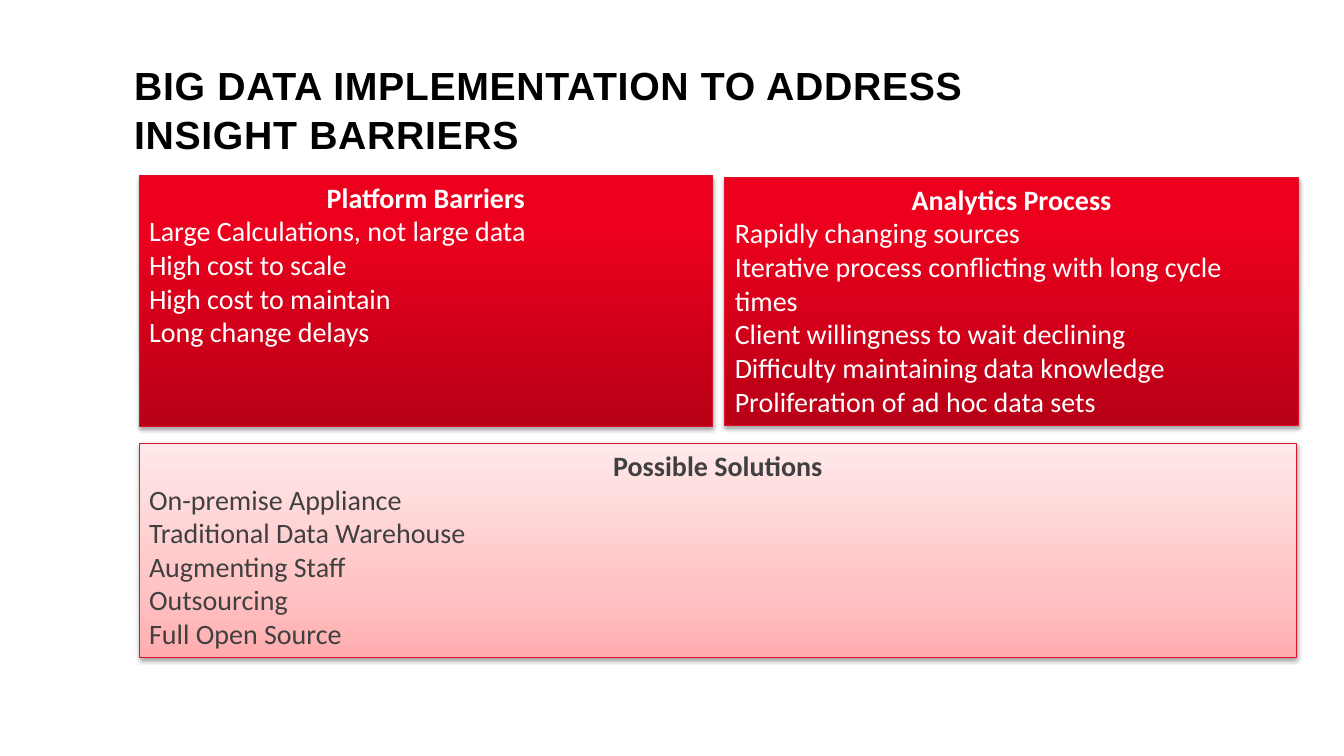
from dataclasses import dataclass

from lxml.etree import SubElement
from pptx import Presentation
from pptx.dml.color import RGBColor
from pptx.enum.shapes import MSO_SHAPE
from pptx.enum.text import MSO_ANCHOR, MSO_AUTO_SIZE, PP_ALIGN
from pptx.oxml.ns import qn
from pptx.slide import Slide
from pptx.util import Inches, Pt

Stops = tuple[tuple[int, str], ...]


@dataclass(frozen=True)
class Theme:
    title_font: str = "Arial"
    body_font: str = "Calibri"
    title_size: int = 28
    body_size: int = 20
    black: str = "000000"
    white: str = "FFFFFF"
    gray: str = "404040"
    border: str = "DD132B"
    red: Stops = ((0, "B70016"), (80, "ED001D"), (100, "EE001D"))
    pink: Stops = ((0, "FFADAF"), (35, "FFC5C6"), (100, "FFE9EA"))


@dataclass(frozen=True)
class Area:
    left: float
    top: float
    width: float
    height: float

    def emu(self) -> tuple[int, ...]:
        shares = (self.left, self.top, self.width, self.height)
        return tuple(round(v * full / 100) for v, full in zip(shares, (WIDTH, HEIGHT) * 2))


@dataclass(frozen=True)
class Panel:
    area: Area
    heading: str
    items: tuple[str, ...]
    stops: Stops
    color: str
    shadow_alpha: int
    shadow_dist: float
    auto_size: MSO_AUTO_SIZE = MSO_AUTO_SIZE.SHAPE_TO_FIT_TEXT


WIDTH, HEIGHT = Inches(13.33), Inches(7.5)
THEME = Theme()
LEFT, COLUMN, GAP = 10.35, 42.68, 0.9
TITLE = "BIG DATA IMPLEMENTATION TO ADDRESS \vINSIGHT BARRIERS"
TITLE_AREA = Area(9.98, 8.8, 90.02, 11.07)
PANELS = (
    Panel(
        Area(LEFT, 23.2, COLUMN, 33.2),
        "Platform Barriers",
        (
            "Large Calculations, not large data",
            "High cost to scale",
            "High cost to maintain",
            "Long change delays",
        ),
        THEME.red, THEME.white, 35, 1.8, MSO_AUTO_SIZE.NONE,
    ),
    Panel(
        Area(LEFT + COLUMN + GAP, 23.47, COLUMN, 32.8),
        "Analytics Process",
        (
            "Rapidly changing sources",
            "Iterative process conflicting with long cycle times",
            "Client willingness to wait declining",
            "Difficulty maintaining data knowledge",
            "Proliferation of ad hoc data sets",
        ),
        THEME.red, THEME.white, 35, 1.8,
    ),
    Panel(
        Area(LEFT, 58.67, 2 * COLUMN + GAP - 0.14, 28.27),
        "Possible Solutions",
        (
            "On-premise Appliance",
            "Traditional Data Warehouse",
            "Augmenting Staff",
            "Outsourcing",
            "Full Open Source",
        ),
        THEME.pink, THEME.gray, 38, 1.6,
    ),
)


def apply(target: object, values: dict[str, object]) -> None:
    for name, value in values.items():
        setattr(target, name, value)


def format_font(font, name: str, size: int, color: str, bold: bool) -> None:
    apply(font, {"name": name, "size": Pt(size), "bold": bold})
    font.color.rgb = RGBColor.from_string(color)


def add_title(slide: Slide) -> None:
    s = slide.shapes.title
    apply(s, dict(zip(("left", "top", "width", "height"), TITLE_AREA.emu())))
    tf = s.text_frame
    apply(tf, {
        "text": TITLE, "word_wrap": True, "auto_size": MSO_AUTO_SIZE.NONE,
        "vertical_anchor": MSO_ANCHOR.MIDDLE,
        "margin_left": 0, "margin_top": 0, "margin_right": 0, "margin_bottom": 0,
    })
    p = tf.paragraphs[0]
    apply(p, {"alignment": PP_ALIGN.LEFT, "line_spacing": 1.04})
    for r in p.runs:
        format_font(r.font, THEME.title_font, THEME.title_size, THEME.black, True)
        r._r.get_or_add_rPr().set("spc", "50")


def add_color(parent, color: str):
    return SubElement(parent, qn("a:srgbClr"), val=color)


def fill_gradient(s, stops: Stops) -> None:
    s.fill.gradient()
    s.fill.gradient_angle = 90
    gs_list = s._element.spPr.find(qn("a:gradFill")).find(qn("a:gsLst"))
    for old in list(gs_list):
        gs_list.remove(old)
    for position, color in stops:
        add_color(SubElement(gs_list, qn("a:gs"), pos=str(position * 1000)), color)


def add_shadow(s, alpha: int, dist: float) -> None:
    s.shadow.inherit = False
    effects = s._element.spPr.find(qn("a:effectLst"))
    shadow = SubElement(
        effects, qn("a:outerShdw"), blurRad=str(Pt(3.1)), dist=str(Pt(dist)),
        dir="5400000", rotWithShape="0",
    )
    SubElement(add_color(shadow, THEME.black), qn("a:alpha"), val=str(alpha * 1000))


def add_panel(slide: Slide, panel: Panel) -> None:
    s = slide.shapes.add_shape(MSO_SHAPE.RECTANGLE, *panel.area.emu())
    fill_gradient(s, panel.stops)
    s.line.color.rgb = RGBColor.from_string(THEME.border)
    s.line.width = Pt(0.75)
    add_shadow(s, panel.shadow_alpha, panel.shadow_dist)
    tf = s.text_frame
    apply(tf, {
        "text": "\n".join((panel.heading, *panel.items)), "word_wrap": True,
        "auto_size": panel.auto_size, "vertical_anchor": MSO_ANCHOR.TOP,
    })
    for i, p in enumerate(tf.paragraphs):
        p.alignment = PP_ALIGN.LEFT if i else PP_ALIGN.CENTER
        format_font(p.runs[0].font, THEME.body_font, THEME.body_size, panel.color, i == 0)


def main() -> None:
    prs = Presentation()
    apply(prs, {"slide_width": WIDTH, "slide_height": HEIGHT})
    slide = prs.slides.add_slide(prs.slide_layouts.get_by_name("Title Only"))
    add_title(slide)
    for panel in PANELS:
        add_panel(slide, panel)
    prs.save("out.pptx")


if __name__ == "__main__":
    main()
